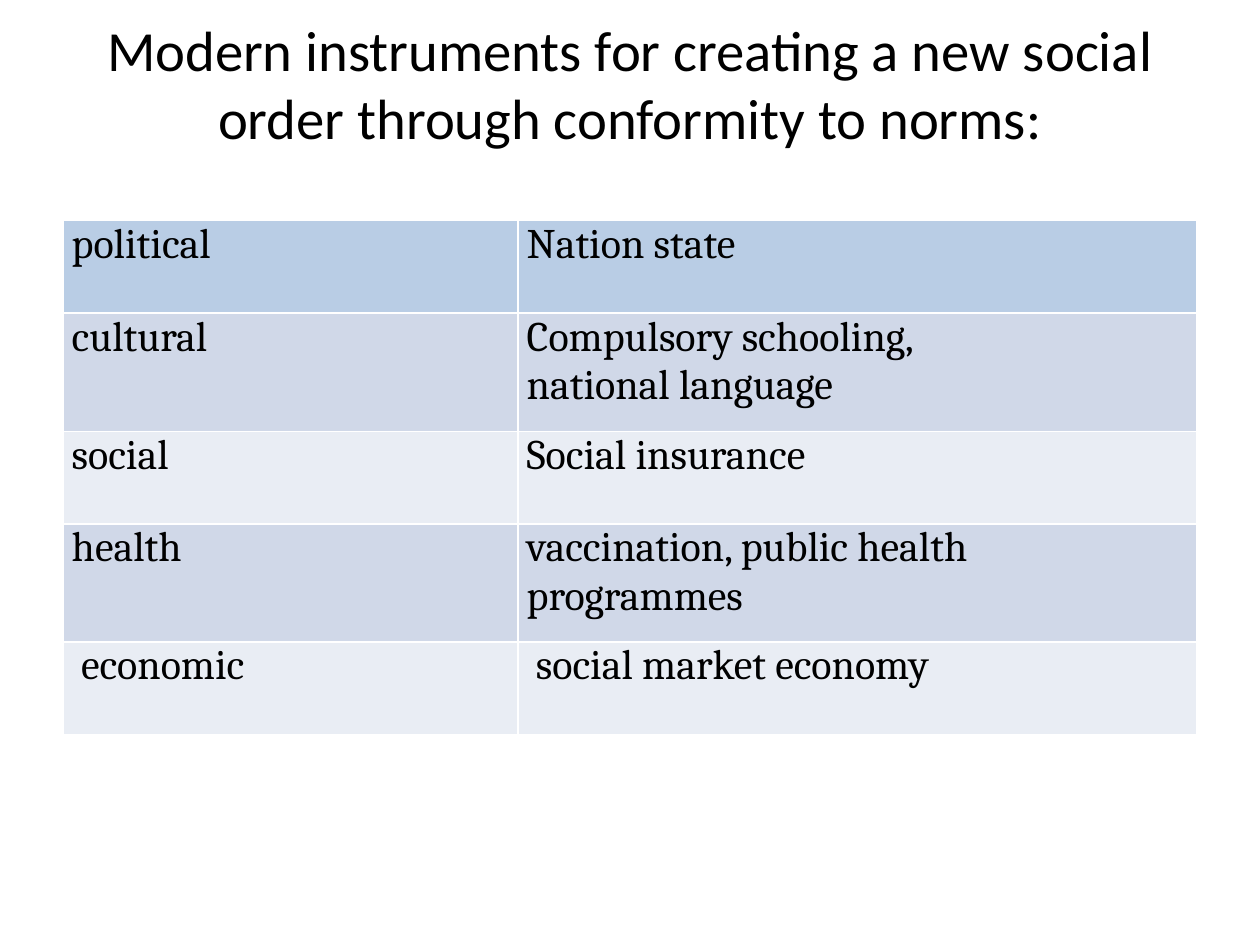
"""Build a slide with a table of modern instruments for a new social order."""
from dataclasses import dataclass

from pptx import Presentation
from pptx.dml.color import RGBColor
from pptx.enum.text import MSO_ANCHOR, MSO_AUTO_SIZE, PP_ALIGN
from pptx.slide import Slide
from pptx.table import _Cell
from pptx.text.text import Font
from pptx.util import Pt

COLORS = {"text": "000000", "header": "B9CDE5", "odd": "D0D8E8", "even": "E9EDF4"}
TITLE = "Modern instruments for creating a new social order through conformity to norms:"
COLUMN_WIDTHS = (260, 388)
CELL_MARGIN = 5


@dataclass
class Instrument:
    """One table row: a field of society and its instrument."""

    field: str
    instrument: str
    height: float = 53
    indent: float = 0


INSTRUMENTS = [
    Instrument("political", "Nation state"),
    Instrument("cultural", "Compulsory schooling,\nnational language", height=67.5),
    Instrument("social", "Social insurance"),
    Instrument("health", "vaccination, public health programmes", height=67.5),
    Instrument("economic", "social market economy", indent=5.3),
]


def style_font(font: Font, name: str, size: float) -> None:
    """Set a regular black font."""
    font.name = name
    font.size = Pt(size)
    font.bold = False
    font.color.rgb = RGBColor.from_string(COLORS["text"])


def add_title(page: Slide) -> None:
    """Fill the title, raised by a deep bottom margin."""
    box = page.shapes.title
    box.left, box.top, box.width, box.height = Pt(36), Pt(21.6), Pt(648), Pt(90)
    frame = box.text_frame
    frame.text = TITLE
    frame.word_wrap = True
    frame.auto_size = MSO_AUTO_SIZE.NONE
    frame.vertical_anchor = MSO_ANCHOR.MIDDLE
    frame.margin_top, frame.margin_bottom = Pt(0), Pt(38)
    para = frame.paragraphs[0]
    para.alignment = PP_ALIGN.CENTER
    style_font(para.font, "Calibri", 32.4)


def fill_cell(cell: _Cell, text: str, color: str, indent: float) -> None:
    """Write and colour one table cell."""
    cell.text = text
    cell.margin_left, cell.margin_right = Pt(CELL_MARGIN + indent), Pt(CELL_MARGIN)
    cell.margin_top = cell.margin_bottom = Pt(0)
    cell.fill.solid()
    cell.fill.fore_color.rgb = RGBColor.from_string(color)
    for para in cell.text_frame.paragraphs:
        style_font(para.font, "Cambria", 24)


def add_instruments(page: Slide) -> None:
    """Add the table with a header colour and alternating bands."""
    height = sum(item.height for item in INSTRUMENTS)
    table = page.shapes.add_table(
        len(INSTRUMENTS), len(COLUMN_WIDTHS),
        Pt(36), Pt(126), Pt(sum(COLUMN_WIDTHS)), Pt(height),
    ).table
    for column, width in zip(table.columns, COLUMN_WIDTHS):
        column.width = Pt(width)
    for index, item in enumerate(INSTRUMENTS):
        table.rows[index].height = Pt(item.height)
        band = "header" if index == 0 else "odd" if index % 2 else "even"
        for cell, text in zip(table.rows[index].cells, (item.field, item.instrument)):
            fill_cell(cell, text, COLORS[band], item.indent)


def main() -> None:
    """Create and save the deck."""
    deck = Presentation()
    deck.slide_width, deck.slide_height = Pt(720), Pt(540)
    page = deck.slides.add_slide(deck.slide_layouts[5])
    add_title(page)
    add_instruments(page)
    deck.save("out.pptx")


if __name__ == "__main__":
    main()
